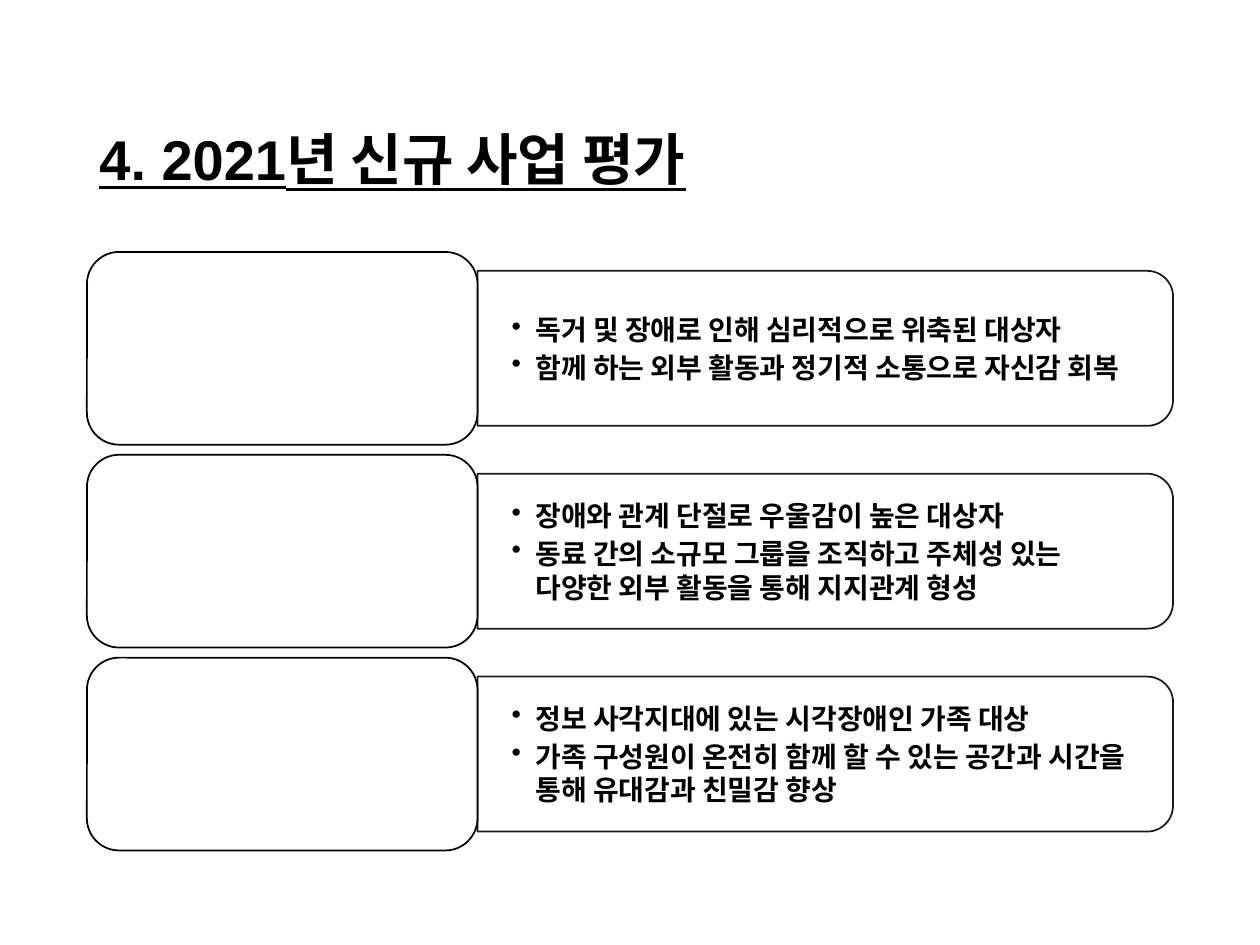
from dataclasses import dataclass

from lxml import etree
from pptx import Presentation
from pptx.dml.color import RGBColor
from pptx.enum.shapes import MSO_SHAPE
from pptx.enum.text import MSO_ANCHOR
from pptx.oxml.ns import qn
from pptx.util import Inches, Pt

ROUND_ALL = MSO_SHAPE.ROUNDED_RECTANGLE
ROUND_TOP = MSO_SHAPE.ROUND_2_SAME_RECTANGLE
MIDDLE = MSO_ANCHOR.MIDDLE

# Content: title, then (font, bullets) for each row
TITLE = "4. 2021년 신규 사업 평가"
ROWS = [
    ("Calibri", ["독거 및 장애로 인해 심리적으로 위축된 대상자",
                 "함께 하는 외부 활동과 정기적 소통으로 자신감 회복"]),
    ("Arial", ["장애와 관계 단절로 우울감이 높은 대상자",
               "동료 간의 소규모 그룹을 조직하고 주체성 있는 다양한 외부 활동을 통해 지지관계 형성"]),
    ("Arial", ["정보 사각지대에 있는 시각장애인 가족 대상",
               "가족 구성원이 온전히 함께 할 수 있는 공간과 시간을 통해 유대감과 친밀감 향상"]),
]


@dataclass(frozen=True)
class Theme:
    ink: RGBColor = RGBColor(0, 0, 0)
    paper: RGBColor = RGBColor(255, 255, 255)
    title_font: str = "Arial"
    title_size: int = 32
    body_size: int = 16
    line_width: int = 1
    panel_opacity: int = 90


THEME = Theme()

# Layout in inches
LEFT, TOP, PITCH = 0.69, 2.0, 1.61
LABEL_WIDTH, LABEL_HEIGHT = 3.1, 1.53
PANEL_WIDTH, PANEL_HEIGHT = 5.52, 1.23
TEXT_WIDTH, TEXT_HEIGHT = 5.46, 1.11
INSET_X, INSET_Y, HANGING = 0.27, 0.14, 0.19


def add_outline(page, kind, left, top, width, height):
    shape = page.shapes.add_shape(
        kind, Inches(left), Inches(top), Inches(width), Inches(height))
    shape.shadow.inherit = False
    shape.fill.solid()
    shape.fill.fore_color.rgb = THEME.paper
    shape.line.color.rgb = THEME.ink
    shape.line.width = Pt(THEME.line_width)
    return shape


def add_text(page, left, top, width, height):
    box = page.shapes.add_textbox(
        Inches(left), Inches(top), Inches(width), Inches(height))
    frame = box.text_frame
    frame.word_wrap = True
    frame.vertical_anchor = MIDDLE
    return frame


def style(para, font, size):
    para.font.name = font
    para.font.size = Pt(size)
    para.font.bold = True
    para.font.color.rgb = THEME.ink


def set_opacity(shape, percent):
    for color in shape._element.spPr.iter(qn("a:srgbClr")):
        etree.SubElement(color, qn("a:alpha"), val=str(percent * 1000))


def add_bullet(para):
    properties = para._p.get_or_add_pPr()
    properties.set("marL", str(Inches(HANGING)))
    properties.set("indent", str(-Inches(HANGING)))
    bullet = etree.Element(qn("a:buChar"), char="•")
    properties.insert_element_before(bullet, "a:tabLst", "a:defRPr", "a:extLst")


def add_row(page, top, font, bullets):
    middle = top + LABEL_HEIGHT / 2
    panel_left = LEFT + LABEL_WIDTH

    # Panel: upright shape turned so its round corners face right
    panel = add_outline(page, ROUND_TOP,
                        panel_left + (PANEL_WIDTH - PANEL_HEIGHT) / 2,
                        middle - PANEL_WIDTH / 2, PANEL_HEIGHT, PANEL_WIDTH)
    panel.rotation = 90
    set_opacity(panel, THEME.panel_opacity)

    # Bulleted text
    frame = add_text(page, panel_left, middle - TEXT_HEIGHT / 2,
                     TEXT_WIDTH, TEXT_HEIGHT)
    frame.margin_left = frame.margin_right = Inches(INSET_X)
    frame.margin_top = frame.margin_bottom = Inches(INSET_Y)
    frame.text = "\n".join(bullets)
    for para in frame.paragraphs:
        style(para, font, THEME.body_size)
        para.space_after = Pt(THEME.body_size * 0.15)
        add_bullet(para)

    # Empty label box
    add_outline(page, ROUND_ALL, LEFT, top, LABEL_WIDTH, LABEL_HEIGHT)


def main():
    deck = Presentation()
    deck.slide_width, deck.slide_height = Inches(10), Inches(7.5)
    page = deck.slides.add_slide(deck.slide_layouts[6])

    # Title
    frame = add_text(page, LEFT, 0.4, 8.62, 1.45)
    frame.text = TITLE
    heading = frame.paragraphs[0]
    style(heading, THEME.title_font, THEME.title_size)
    heading.font.underline = True
    heading.line_spacing = 1.5

    for index, (font, bullets) in enumerate(ROWS):
        add_row(page, TOP + index * PITCH, font, bullets)

    deck.save("out.pptx")


if __name__ == "__main__":
    main()
